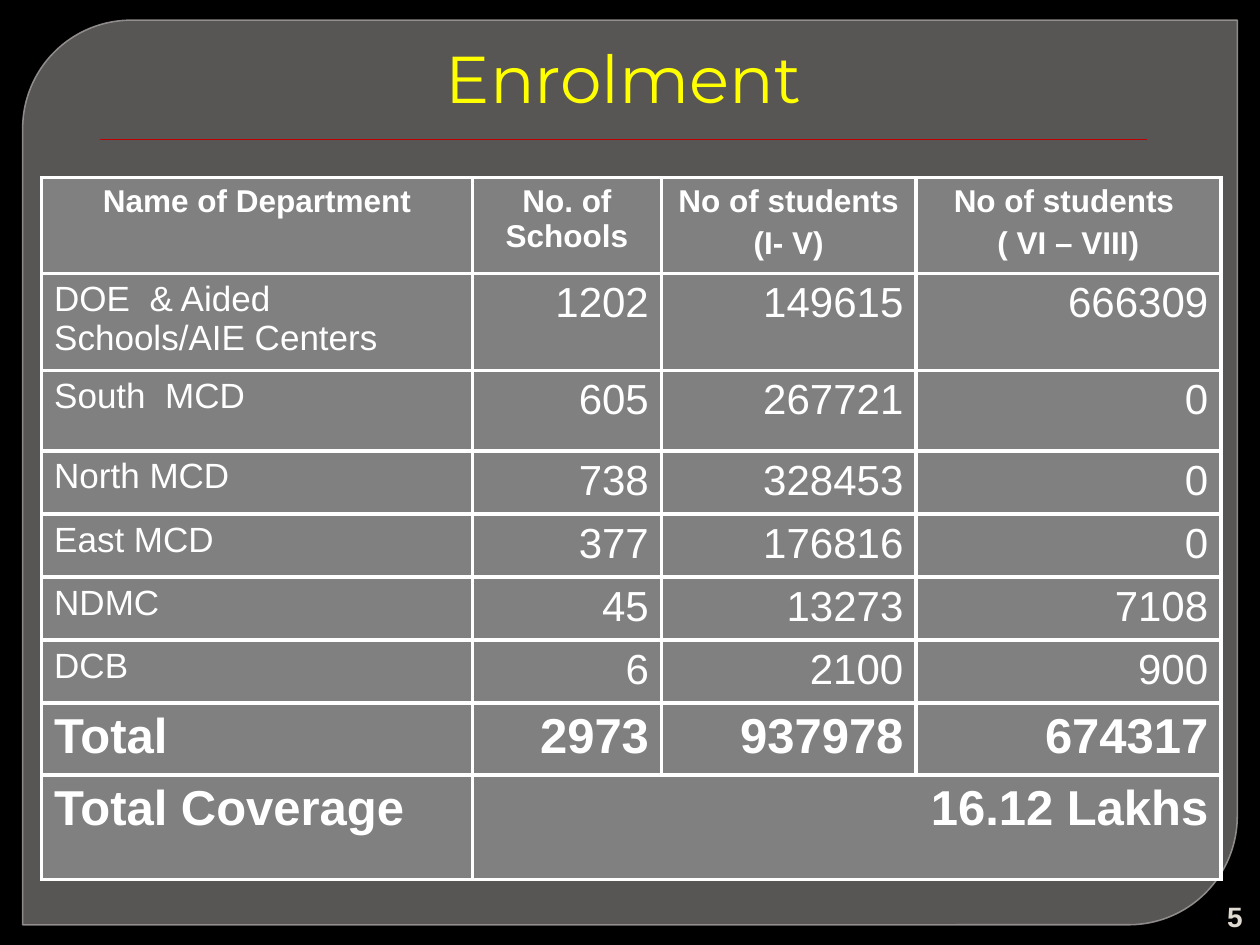
"""Build the school enrolment table slide."""
from lxml import etree
from pptx import Presentation
from pptx import util as u
from pptx.dml import color
from pptx.enum import shapes, text
from pptx.oxml import ns

COLORS = {
    "background": "000000", "panel": "888484", "panel_edge": "9D9898",
    "title": "FFFF00", "rule": "C00000", "cell": "808080",
    "cell_text": "FFFFFF", "border": "FFFFFF", "number": "DFDBD2",
}
COLUMN_WIDTHS = [3.42, 1.5, 2.02, 2.42]
ROW_HEIGHTS = [0.76, 0.77, 0.64, 0.5, 0.5, 0.5, 0.5, 0.57, 0.83]
ROWS = [
    ["Name of Department", "No. of Schools", "No of students\n(I- V)", "No of students \n( VI – VIII)"],
    ["DOE  & Aided Schools/AIE Centers", "1202", "149615", "666309"],
    ["South  MCD", "605", "267721", "0"],
    ["North MCD", "738", "328453", "0"],
    ["East MCD", "377", "176816", "0"],
    ["NDMC", "45", "13273", "7108"],
    ["DCB", "6", "2100", "900"],
    ["Total", "2973", "937978", "674317"],
    ["Total Coverage", "16.12 Lakhs", "", ""],
]
ALIGN = text.PP_ALIGN


def rgb(name):
    return color.RGBColor.from_string(COLORS[name])


def add_span(para, words, size, font, color_name, bold=False):
    span = para.add_run()
    span.text = words
    span.font.size = u.Pt(size)
    span.font.name = font
    span.font.bold = bold
    span.font.color.rgb = rgb(color_name)


deck = Presentation()
deck.slide_width, deck.slide_height = u.Inches(10), u.Inches(7.5)
page = deck.slides.add_slide(deck.slide_layouts[6])
page.background.fill.solid()
page.background.fill.fore_color.rgb = rgb("background")

panel = page.shapes.add_shape(
    shapes.MSO_SHAPE.ROUND_2_DIAG_RECTANGLE,
    u.Inches(0.18), u.Inches(0.16), u.Inches(9.64), u.Inches(7.18))
panel.adjustments[0] = 0.12
panel.adjustments[1] = 0
panel.shadow.inherit = False
panel.fill.solid()
panel.fill.fore_color.rgb = rgb("panel")
panel.line.color.rgb = rgb("panel_edge")
panel.line.width = u.Pt(0.87)
for tint, opacity in zip(panel.element.spPr.iter(ns.qn("a:srgbClr")), [65, 88]):
    etree.SubElement(tint, ns.qn("a:alpha"), val=str(opacity * 1000))

labels = [
    ("Enrolment", (0.45, 0.25, 9, 0.8), text.MSO_ANCHOR.TOP, ALIGN.CENTER, 37.8, "Montserrat", "title", False),
    ("5", (9.45, 7.12, 0.51, 0.3), text.MSO_ANCHOR.MIDDLE, ALIGN.RIGHT, 16, "Arial", "number", True),
]
for words, place, anchor, align, size, font, color_name, bold in labels:
    box = page.shapes.add_textbox(*map(u.Inches, place))
    box.text_frame.word_wrap = True
    box.text_frame.vertical_anchor = anchor
    para = box.text_frame.paragraphs[0]
    para.alignment = align
    add_span(para, words, size, font, color_name, bold)

rule = page.shapes.add_connector(
    shapes.MSO_CONNECTOR.STRAIGHT,
    u.Inches(0.79), u.Inches(1.11), u.Inches(9.1), u.Inches(1.11))
rule.line.color.rgb = rgb("rule")
rule.line.width = u.Pt(0.75)
etree.SubElement(rule.element.spPr, ns.qn("a:effectLst"))

table = page.shapes.add_table(
    len(ROWS), len(COLUMN_WIDTHS), u.Inches(0.33), u.Inches(1.41),
    u.Inches(sum(COLUMN_WIDTHS)), u.Inches(sum(ROW_HEIGHTS))).table
table.first_row = table.horz_banding = False
for column, width in zip(table.columns, COLUMN_WIDTHS):
    column.width = u.Inches(width)
for row, height in zip(table.rows, ROW_HEIGHTS):
    row.height = u.Inches(height)
table.cell(8, 1).merge(table.cell(8, 3))

for row_index, row in enumerate(ROWS):
    header, total = row_index == 0, row_index >= 7
    for column_index, words in enumerate(row):
        cell = table.cell(row_index, column_index)
        properties = cell._tc.get_or_add_tcPr()
        for side in ("lnL", "lnR", "lnT", "lnB"):
            border = etree.SubElement(properties, ns.qn(f"a:{side}"), w=str(u.Pt(2.25)))
            solid = etree.SubElement(border, ns.qn("a:solidFill"))
            etree.SubElement(solid, ns.qn("a:srgbClr"), val=COLORS["border"])
        cell.fill.solid()
        cell.fill.fore_color.rgb = rgb("cell")
        if cell.is_spanned:
            continue
        size = 18 if header else 28 if total else 24 if column_index else 20
        align = ALIGN.CENTER if header else ALIGN.RIGHT if column_index else ALIGN.LEFT
        for line_index, line in enumerate(words.split("\n")):
            para = cell.text_frame.add_paragraph() if line_index else cell.text_frame.paragraphs[0]
            para.alignment = align
            if line_index:
                para.space_before = u.Pt(3.6)
            add_span(para, line, size, "Arial", "cell_text", header or total)

deck.save("out.pptx")
